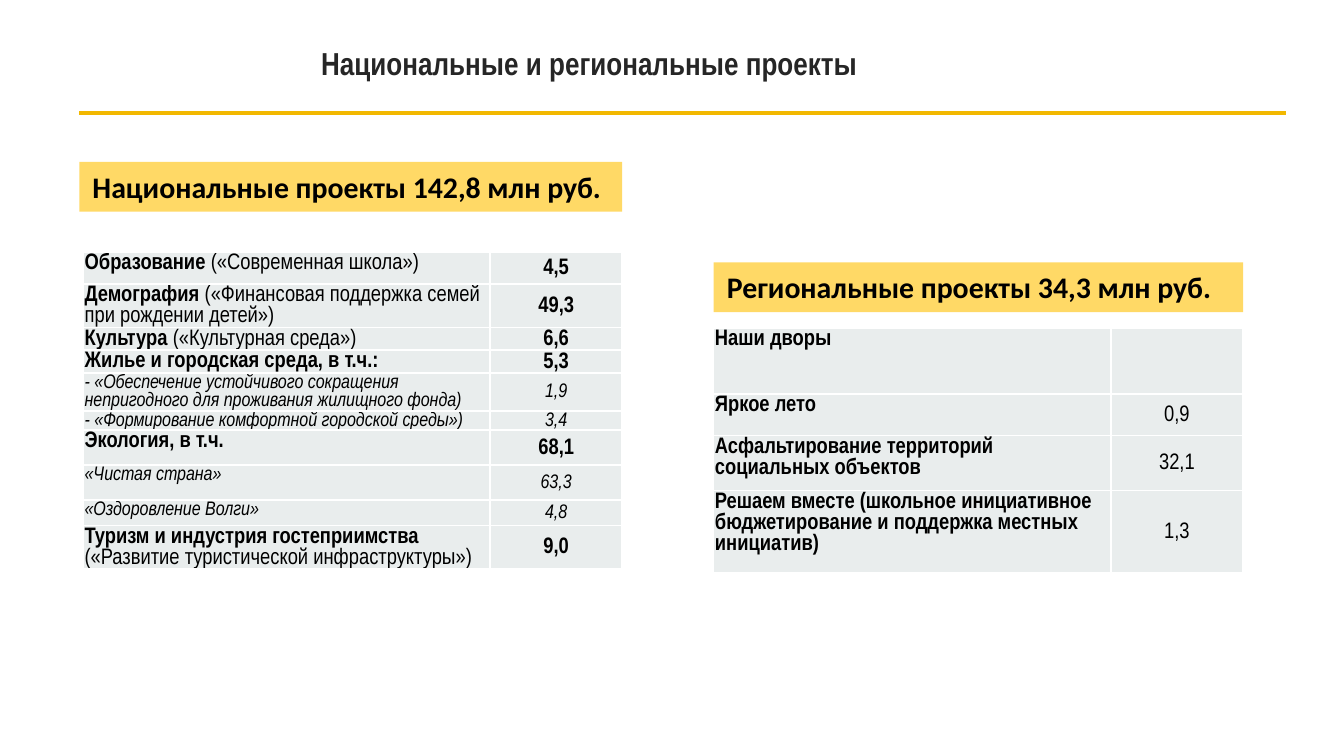
import pptx
import pptx.util
import pptx.dml.color
import pptx.enum.shapes
import pptx.enum.text
import pptx.oxml
import pptx.oxml.ns
from dataclasses import dataclass

Anchor = pptx.enum.text.MSO_ANCHOR
Align = pptx.enum.text.PP_ALIGN
W = 10
H = W * 9 / 16


@dataclass(frozen=True)
class Theme:
    ink: str = "000000"
    title_ink: str = "262626"
    rule: str = "F2B800"
    banner: str = "FFD966"
    cell: str = "E9EDED"
    border: str = "FFFFFF"
    body_font: str = "Arial Narrow"
    banner_font: str = "Calibri"
    title_size: float = 17
    banner_size: float = 16
    body_size: float = 12
    detail_size: float = 10.5


T = Theme()

# Rows: bold label, regular label, value, is detail, least height (0 fits the text)
NATIONAL = [
    ("Образование ", "(«Современная школа»)", "4,5", False, 0.24),
    ("Демография", " («Финансовая поддержка семей при рождении детей»)", "49,3", False, 0.31),
    ("Культура", " («Культурная среда»)", "6,6", False, 0.17),
    ("Жилье и городская среда, в т.ч.:", "", "5,3", False, 0.17),
    ("", "- «Обеспечение устойчивого сокращения непригодного для проживания жилищного фонда)",
     "1,9", True, 0),
    ("", "- «Формирование комфортной городской среды»)", "3,4", True, 0),
    ("Экология, в т.ч.", "", "68,1", False, 0.26),
    ("", "«Чистая страна»", "63,3", True, 0.26),
    ("", "«Оздоровление Волги»", "4,8", True, 0.19),
    ("Туризм и индустрия гостеприимства ", "(«Развитие туристической инфраструктуры»)",
     "9,0", False, 0.24),
]
REGIONAL = [
    ("Наши дворы", "", "", False, 0.49),
    ("Яркое лето", "", "0,9", False, 0.31),
    ("Асфальтирование территорий социальных объектов", "", "32,1", False, 0.31),
    ("Решаем вместе (школьное инициативное бюджетирование и поддержка местных инициатив)",
     "", "1,3", False, 0),
]


def rgb(color):
    return pptx.dml.color.RGBColor.from_string(color)


def emu(box):
    return [pptx.util.Inches(v) for v in box]


def add_text(p, text, font=T.body_font, size=T.body_size, color=T.ink,
             bold=False, italic=False, align=None):
    if align is not None:
        p.alignment = align
    r = p.add_run()
    r.text = text
    r.font.name, r.font.size = font, pptx.util.Pt(size)
    r.font.bold, r.font.italic = bold, italic
    r.font.color.rgb = rgb(color)


def add_header(s, box, rule):
    # Title placeholder
    title = s.shapes.title
    title.left, title.top, title.width, title.height = emu(box)
    tf = title.text_frame
    tf.word_wrap = True
    tf.vertical_anchor = Anchor.MIDDLE
    tf.margin_left = tf.margin_right = pptx.util.Inches(0.07)
    tf.margin_top = tf.margin_bottom = pptx.util.Inches(0.04)
    p = tf.paragraphs[0]
    p.line_spacing = 0.9
    add_text(p, "Национальные и региональные проекты", size=T.title_size,
             color=T.title_ink, bold=True, align=Align.LEFT)

    # Rule under the title
    line = s.shapes.add_connector(pptx.enum.shapes.MSO_CONNECTOR.STRAIGHT, *emu(rule))
    line.line.color.rgb = rgb(T.rule)
    line.line.width = pptx.util.Pt(2.25)
    line._element.spPr.append(pptx.oxml.parse_xml(
        f'<a:effectLst {pptx.oxml.ns.nsdecls("a")}/>'))


def add_banner(s, box, text):
    sp = s.shapes.add_shape(pptx.enum.shapes.MSO_SHAPE.RECTANGLE, *emu(box))
    sp.shadow.inherit = False
    sp.fill.solid()
    sp.fill.fore_color.rgb = rgb(T.banner)
    sp.line.fill.background()
    tf = sp.text_frame
    tf.word_wrap = True
    tf.auto_size = pptx.enum.text.MSO_AUTO_SIZE.SHAPE_TO_FIT_TEXT
    tf.vertical_anchor = Anchor.TOP
    add_text(tf.paragraphs[0], text, font=T.banner_font, size=T.banner_size,
             bold=True, align=Align.LEFT)


def format_cell(cell):
    tc_pr = cell._tc.get_or_add_tcPr()
    for side in ("lnL", "lnR", "lnT", "lnB"):
        tc_pr.append(pptx.oxml.parse_xml(
            f'<a:{side} {pptx.oxml.ns.nsdecls("a")} w="12700"><a:solidFill>'
            f'<a:srgbClr val="{T.border}"/></a:solidFill></a:{side}>'))
    cell.fill.solid()
    cell.fill.fore_color.rgb = rgb(T.cell)
    cell.margin_left = cell.margin_right = cell.margin_top = pptx.util.Inches(0.01)
    cell.margin_bottom = 0


def add_projects(s, box, rows, label_share, bold_values):
    frame = s.shapes.add_table(len(rows), 2, *emu(box))
    table = frame.table
    table.first_row = table.horz_banding = False
    for column, share in zip(table.columns, (label_share, 1 - label_share)):
        column.width = pptx.util.Inches(box[2] * share)

    for i, (strong, plain, value, detail, row_height) in enumerate(rows):
        table.rows[i].height = pptx.util.Inches(row_height)
        label, amount = table.cell(i, 0), table.cell(i, 1)
        format_cell(label)
        format_cell(amount)
        size = T.detail_size if detail else T.body_size
        p = label.text_frame.paragraphs[0]
        if strong:
            add_text(p, strong, size=size, bold=True)
        if plain:
            add_text(p, plain, size=size, italic=detail)
        if value:
            amount.vertical_anchor = Anchor.MIDDLE
            add_text(amount.text_frame.paragraphs[0], value, size=size, italic=detail,
                     bold=bold_values and not detail, align=Align.CENTER)
    # Row heights resize the frame, so its height is set last
    frame.height = pptx.util.Inches(box[3])


def main():
    prs = pptx.Presentation()
    prs.slide_width, prs.slide_height = emu((W, H))
    s = prs.slides.add_slide(prs.slide_layouts[5])

    # Shares of the slide that set the two columns
    left, right = 0.059 * W, 0.531 * W
    left_width, right_width = 0.404 * W, 0.394 * W
    banner_height = 0.066 * H
    rule_y = 0.15 * H

    add_header(s, (0.232 * W, 0.021 * H, 0.606 * W, 0.13 * H),
               (left, rule_y, 0.957 * W, rule_y))

    # National projects
    add_projects(s, (left + 0.03, 0.333 * H, left_width - 0.03, 0.485 * H),
                 NATIONAL, 0.755, True)
    add_banner(s, (left, 0.214 * H, left_width, banner_height),
               "Национальные проекты 142,8 млн руб.")

    # Regional projects
    add_projects(s, (right, 0.434 * H, right_width, 0.325 * H), REGIONAL, 0.75, False)
    add_banner(s, (right, 0.347 * H, right_width, banner_height),
               "Региональные проекты 34,3 млн руб.")

    prs.save("out.pptx")


if __name__ == "__main__":
    main()
